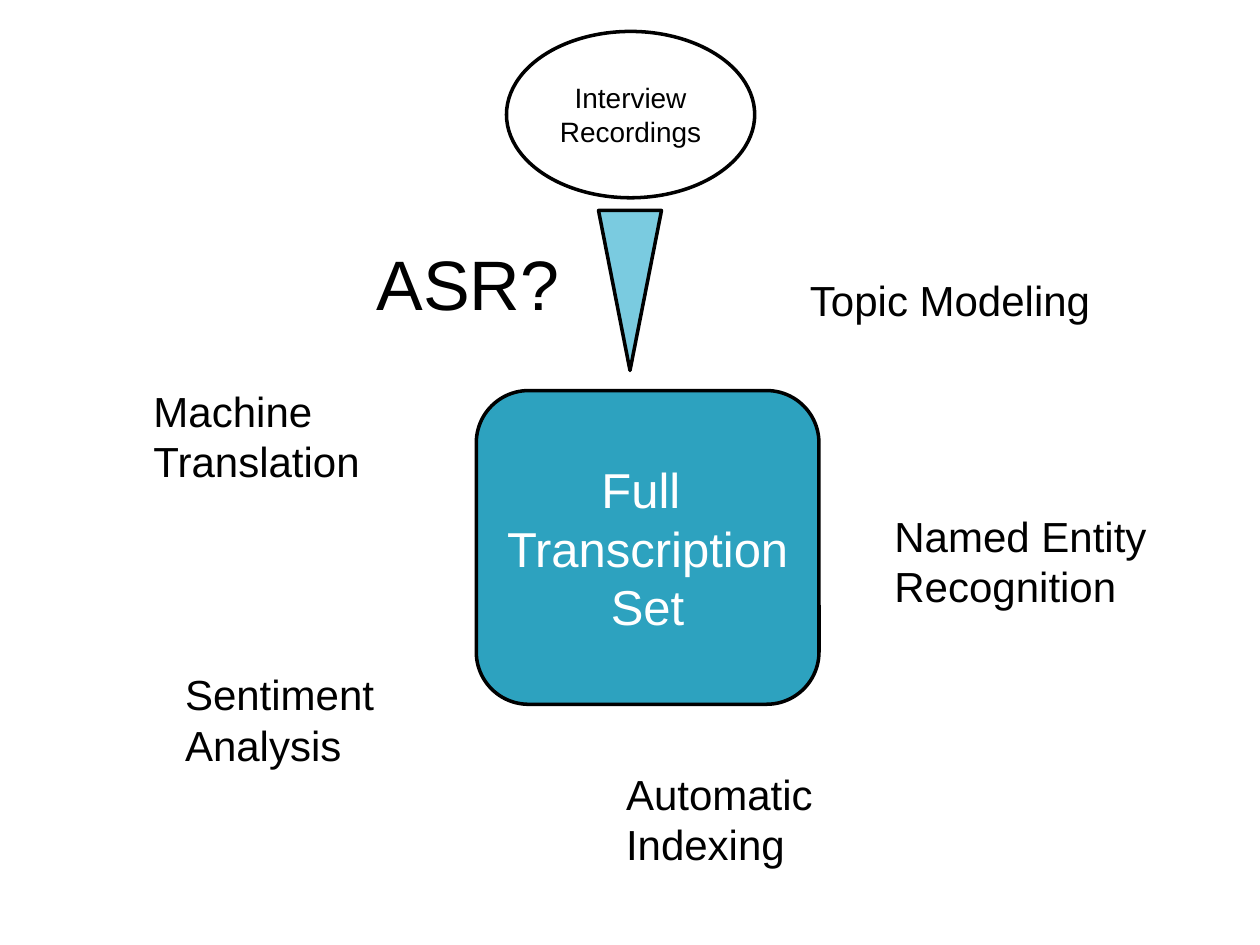
from pptx import Presentation
from pptx.dml.color import RGBColor as RGB
from pptx.enum.shapes import MSO_SHAPE as Shape
from pptx.enum.text import MSO_ANCHOR as Anchor, MSO_AUTO_SIZE as Fit, PP_ALIGN as Align
from pptx.util import Inches, Pt

BLACK = RGB(0, 0, 0)
WHITE = RGB(255, 255, 255)
TEAL = RGB(0x2D, 0xA2, 0xBF)
PALE = RGB(0x7A, 0xCB, 0xE0)
FONT = "Arial"

# Places are left, top, width, height in percent of the slide.
SHAPES = [
    (Shape.ROUNDED_RECTANGLE, (37.8, 41.33, 27.2, 33.2), 0, TEAL,
     ["Full ", "Transcription ", "Set"], 28, WHITE),
    (Shape.ISOSCELES_TRIANGLE, (47.5, 22.27, 5, 16.93), 180, PALE, [], 16, BLACK),
    (Shape.OVAL, (40.2, 3.33, 19.7, 17.6), 0, WHITE,
     ["Interview Recordings"], 16, BLACK),
]
LABELS = [
    ("Topic Modeling", (63.3, 28.4, 27.2, 6.67), 24),
    ("Sentiment Analysis", (13.7, 70.13, 27.2, 12.13), 24),
    ("Named Entity Recognition", (70, 53.33, 27.2, 12.13), 24),
    ("Machine Translation", (11.2, 40.13, 19.7, 12.13), 24),
    ("Automatic Indexing", (48.7, 80.67, 27.2, 12.13), 24),
    ("ASR?", (28.9, 24.8, 19.2, 10.27), 40),
]

deck = Presentation()
deck.slide_width, deck.slide_height = Inches(10), Inches(7.5)
slide = deck.slides.add_slide(deck.slide_layouts[6])


def place(box):
    sides = (deck.slide_width, deck.slide_height) * 2
    return [round(side * part / 100) for side, part in zip(sides, box)]


def write(frame, lines, size, color, align):
    frame.word_wrap = True
    frame.text = "\n".join(lines)
    for para in frame.paragraphs:
        para.alignment = align
        para.font.name = FONT
        para.font.size = Pt(size)
        para.font.color.rgb = color


for kind, box, turn, fill, lines, size, color in SHAPES:
    shape = slide.shapes.add_shape(kind, *place(box))
    shape.rotation = turn
    shape.shadow.inherit = False
    shape.fill.solid()
    shape.fill.fore_color.rgb = fill
    shape.line.color.rgb = BLACK
    shape.line.width = Pt(2)
    if lines:
        shape.text_frame.vertical_anchor = Anchor.MIDDLE
        write(shape.text_frame, lines, size, color, Align.CENTER)

for text, box, size in LABELS:
    frame = slide.shapes.add_textbox(*place(box)).text_frame
    write(frame, [text], size, BLACK, Align.LEFT)
    frame.auto_size = Fit.SHAPE_TO_FIT_TEXT

deck.save("out.pptx")
